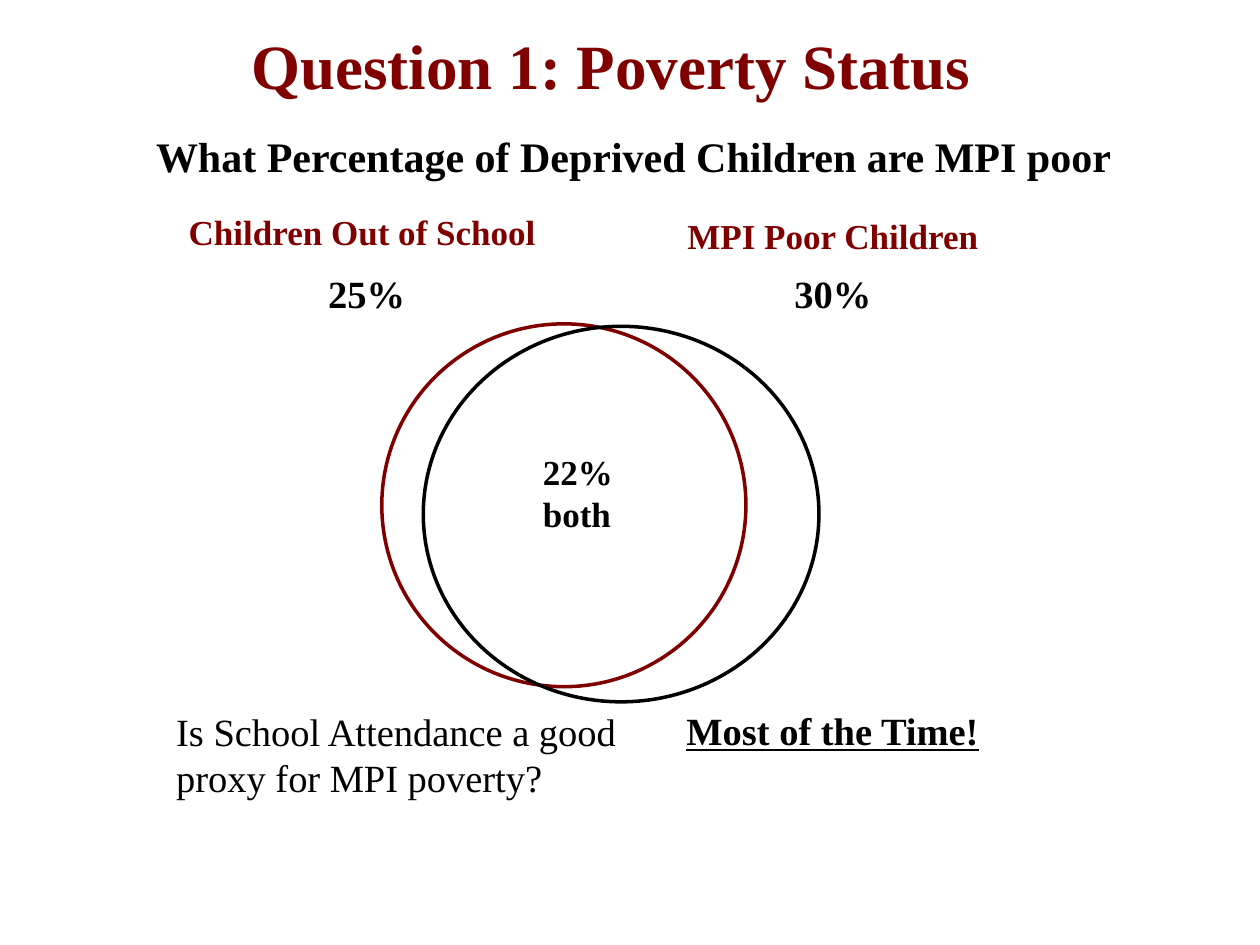
from dataclasses import dataclass

from pptx import Presentation
from pptx.dml.color import RGBColor
from pptx.enum.shapes import MSO_SHAPE
from pptx.enum.text import MSO_ANCHOR, PP_ALIGN as ALIGN
from pptx.util import Inches, Pt


@dataclass(frozen=True)
class Theme:
    font: str = "Times New Roman"
    maroon: RGBColor = RGBColor(0x80, 0x00, 0x00)
    black: RGBColor = RGBColor(0x00, 0x00, 0x00)
    title: int = 36
    subtitle: int = 24
    body: int = 22
    label: int = 20
    outline: int = 2


theme = Theme()
presentation = Presentation()
presentation.slide_width = Inches(10)
presentation.slide_height = Inches(7.5)
slide = presentation.slides.add_slide(presentation.slide_layouts[6])


def add_text(box, lines, size, color=theme.black, align=ALIGN.LEFT,
             bold=True, underline=False, wrap=True, anchor=MSO_ANCHOR.TOP):
    shape = slide.shapes.add_textbox(*map(Inches, box))
    frame = shape.text_frame
    frame.word_wrap = wrap
    frame.vertical_anchor = anchor
    for index, line in enumerate(lines):
        paragraph = frame.add_paragraph() if index else frame.paragraphs[0]
        paragraph.alignment = align
        run = paragraph.add_run()
        run.text = line
        run.font.name = theme.font
        run.font.size = Pt(size)
        run.font.bold = bold
        run.font.underline = underline
        run.font.color.rgb = color


add_text((0.35, 0.28, 9, 0.46), ["Question 1: Poverty Status"], theme.title,
         theme.maroon, ALIGN.CENTER, anchor=MSO_ANCHOR.MIDDLE)
add_text((1.14, 0.99, 8.43, 0.51),
         ["What Percentage of Deprived Children are MPI poor"],
         theme.subtitle, align=ALIGN.JUSTIFY)

groups = [
    ("Children Out of School", (0.67, 1.62, 4.41, 0.44),
     "25%", (1.69, 2.09, 2.44, 0.47),
     (3.03, 2.57, 2.89, 2.88), theme.maroon),
    ("MPI Poor Children", (4.74, 1.65, 3.74, 0.44),
     "30%", (5.94, 2.09, 1.34, 0.88),
     (3.36, 2.59, 3.14, 2.98), theme.black),
]
for name, name_box, share, share_box, circle_box, circle_color in groups:
    circle = slide.shapes.add_shape(MSO_SHAPE.OVAL, *map(Inches, circle_box))
    circle.shadow.inherit = False
    circle.fill.background()
    circle.line.color.rgb = circle_color
    circle.line.width = Pt(theme.outline)
    add_text(name_box, [name], theme.label, theme.maroon, ALIGN.CENTER)
    add_text(share_box, [share], theme.body, align=ALIGN.CENTER)

add_text((4.21, 3.53, 0.81, 0.77), ["22%", "both"], theme.label, wrap=False)
add_text((1.3, 5.57, 4.21, 0.84),
         ["Is School Attendance a good proxy for MPI poverty?"],
         theme.body, bold=False)
add_text((5.35, 5.56, 2.6, 0.47), ["Most of the Time!"], theme.body,
         underline=True, wrap=False)

presentation.save("out.pptx")
